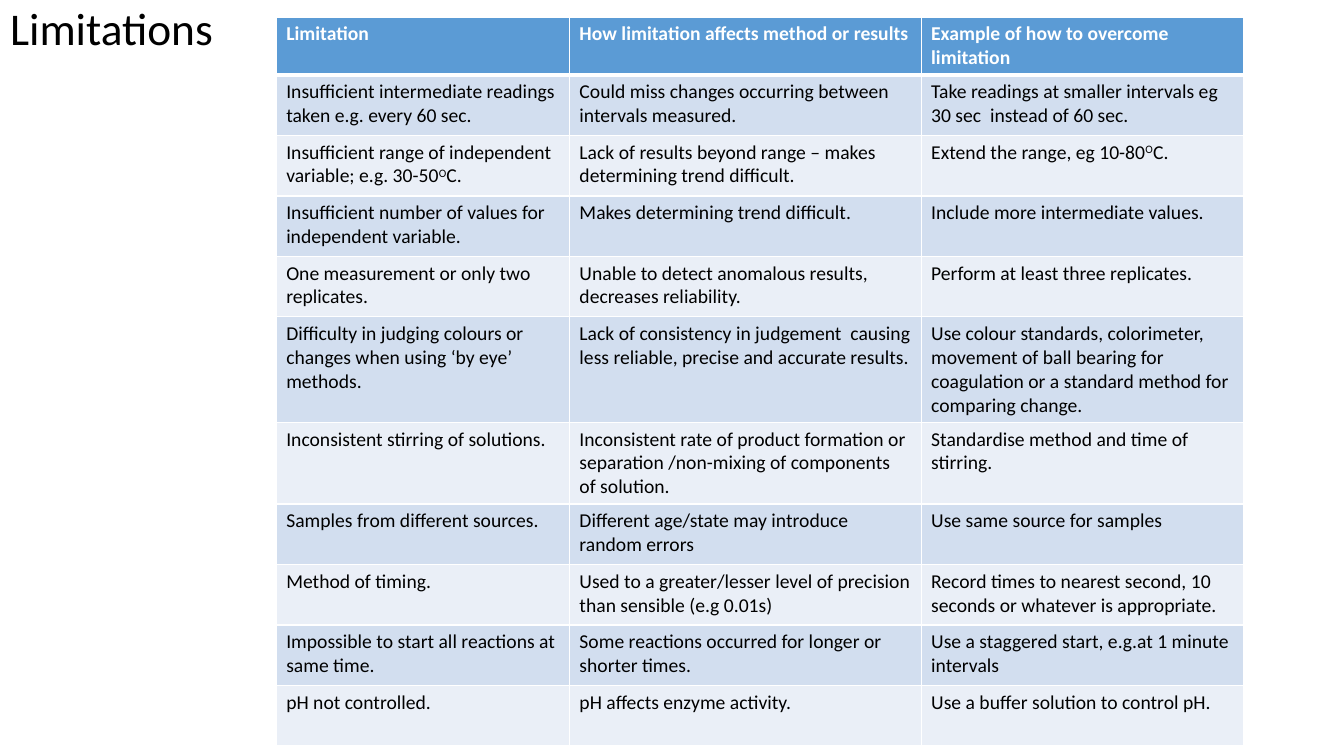
from dataclasses import dataclass

from lxml import etree
from pptx import Presentation
from pptx import util as u
from pptx.dml.color import RGBColor
from pptx.enum import text
from pptx.oxml.ns import qn

WIDTH, HEIGHT = u.Inches(13.333), u.Inches(7.5)
FONT = "Calibri"
BLACK, WHITE, HEADER_BLUE = "000000", "FFFFFF", "5B9BD5"
BANDS = ("D2DEEF", "EAEFF7")
COLUMN_SHARES = (21.82, 26.17, 24)
HEADER_SHARE = 7.6


@dataclass
class Limitation:
    problem: str
    effect: str
    remedy: str
    share: float = 8


HEADINGS = Limitation("Limitation", "How limitation affects method or results",
                      "Example of how to overcome limitation", HEADER_SHARE)
# A pair of ^ marks encloses superscript.
LIMITATIONS = [
    Limitation("Insufficient intermediate readings taken e.g. every 60 sec.",
               "Could miss changes occurring between intervals measured.",
               "Take readings at smaller intervals eg 30 sec  instead of 60 sec."),
    Limitation("Insufficient range of independent variable; e.g. 30-50^O^C.",
               "Lack of results beyond range – makes determining trend difficult.",
               "Extend the range, eg 10-80^O^C."),
    Limitation("Insufficient number of values for independent variable.",
               "Makes determining trend difficult.",
               "Include more intermediate values."),
    Limitation("One measurement or only two replicates.",
               "Unable to detect anomalous results, decreases reliability.",
               "Perform at least three replicates."),
    Limitation("Difficulty in judging colours or changes when using ‘by eye’ methods.",
               "Lack of consistency in judgement  causing less reliable, precise and accurate results.",
               "Use colour standards, colorimeter,  movement of ball bearing for coagulation "
               "or a standard method for comparing change.", 13.73),
    Limitation("Inconsistent stirring of solutions.",
               "Inconsistent rate of product formation or separation /non-mixing of components of solution.",
               "Standardise method and time of stirring.", 10.67),
    Limitation("Samples from different sources.",
               "Different age/state may introduce random errors",
               "Use same source for samples"),
    Limitation("Method of timing.",
               "Used to a greater/lesser level of precision than sensible (e.g 0.01s)",
               "Record times to nearest second, 10 seconds or whatever is appropriate."),
    Limitation("Impossible to start all reactions at same time.",
               "Some reactions occurred for longer or shorter times.",
               "Use a staggered start, e.g.at 1 minute intervals"),
    Limitation("pH not controlled.", "pH affects enzyme activity.",
               "Use a buffer solution to control pH."),
]


def across(share: float) -> int:
    """Percentage of the slide's width."""
    return round(WIDTH * share / 100)


def down(share: float) -> int:
    """Percentage of the slide's height."""
    return round(HEIGHT * share / 100)


def rgb(colour: str) -> RGBColor:
    return RGBColor.from_string(colour)


def style_run(r, size: float, colour: str, bold: bool = False) -> None:
    r.font.name, r.font.size, r.font.bold = FONT, u.Pt(size), bold
    r.font.color.rgb = rgb(colour)


def add_borders(cell, top: float, bottom: float) -> None:
    tc_pr = cell._tc.get_or_add_tcPr()
    for side, width in (("L", 1), ("R", 1), ("T", top), ("B", bottom)):
        line = etree.SubElement(tc_pr, qn(f"a:ln{side}"), w=str(u.Pt(width)))
        fill = etree.SubElement(line, qn("a:solidFill"))
        etree.SubElement(fill, qn("a:srgbClr"), val=WHITE)


def fill_cell(cell, wording: str, row: int) -> None:
    header = row == 0
    add_borders(cell, top=3 if row == 1 else 1, bottom=3 if header else 1)
    cell.fill.solid()
    cell.fill.fore_color.rgb = rgb(HEADER_BLUE if header else BANDS[(row - 1) % 2])
    p = cell.text_frame.paragraphs[0]
    for i, part in enumerate(wording.split("^")):
        r = p.add_run()
        r.text = part
        style_run(r, 14, WHITE if header else BLACK, header)
        if i % 2:
            r._r.get_or_add_rPr().set("baseline", "30000")


def add_title(s) -> None:
    sp = s.shapes.title
    sp.left, sp.top, sp.width, sp.height = 0, 0, across(67.5), down(8.13)
    tf = sp.text_frame
    tf.text = "Limitations"
    tf.auto_size = text.MSO_AUTO_SIZE.NONE
    tf.vertical_anchor = text.MSO_ANCHOR.MIDDLE
    p = tf.paragraphs[0]
    p.alignment, p.line_spacing = text.PP_ALIGN.LEFT, 0.9
    style_run(p.runs[0], 32.4, BLACK)


def add_limitations_table(s) -> None:
    rows = [HEADINGS, *LIMITATIONS]
    table = s.shapes.add_table(
        len(rows), len(COLUMN_SHARES), across(20.55), down(2.27),
        across(sum(COLUMN_SHARES)), down(sum(row.share for row in rows))).table
    for column, share in zip(table.columns, COLUMN_SHARES):
        column.width = across(share)
    for i, row in enumerate(rows):
        table.rows[i].height = down(row.share)
        for j, wording in enumerate((row.problem, row.effect, row.remedy)):
            fill_cell(table.cell(i, j), wording, i)


def main() -> None:
    prs = Presentation()
    prs.slide_width, prs.slide_height = WIDTH, HEIGHT
    s = prs.slides.add_slide(prs.slide_layouts[5])
    add_title(s)
    add_limitations_table(s)
    prs.save("out.pptx")


if __name__ == "__main__":
    main()
